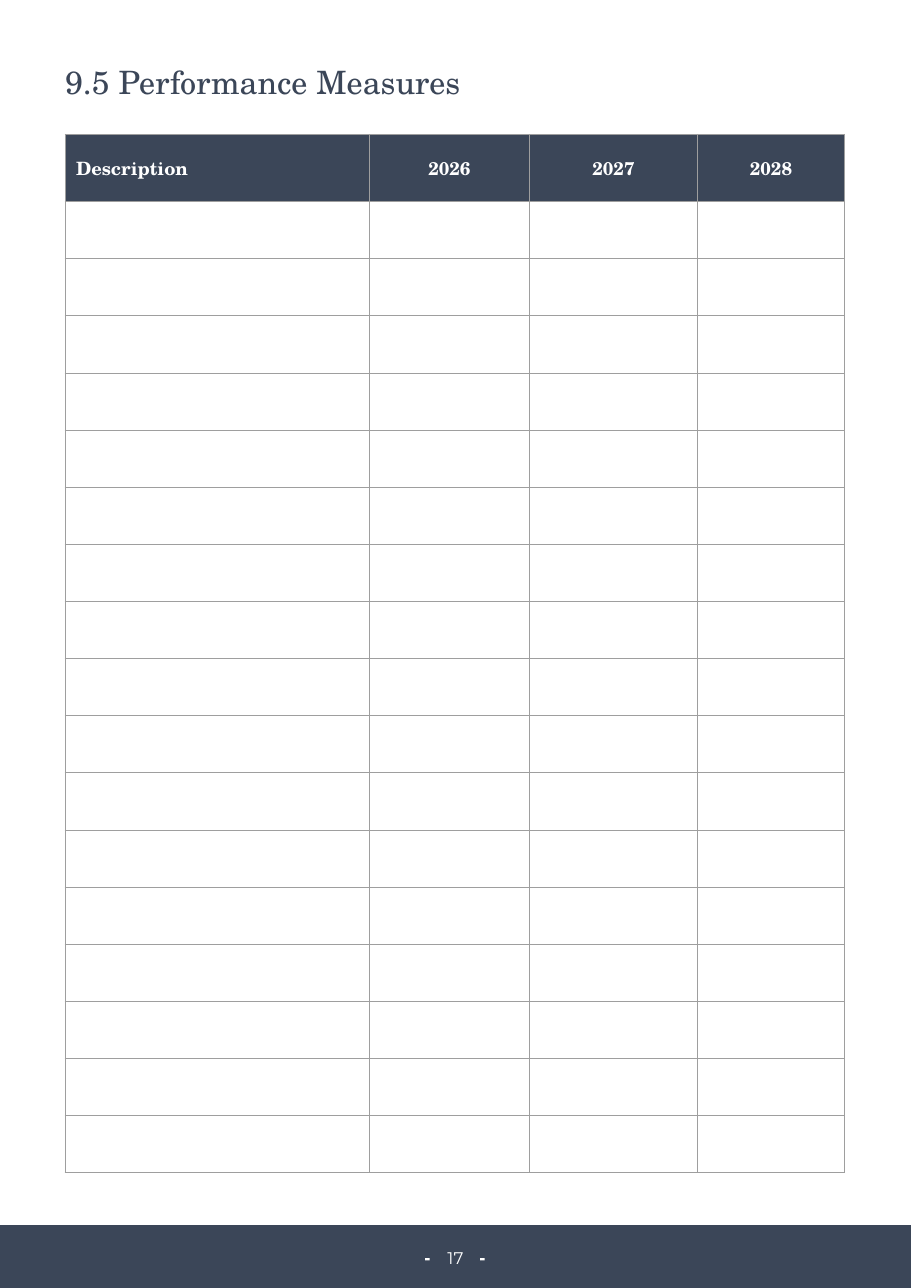
from lxml import etree
from pptx import Presentation
from pptx.dml.color import RGBColor
from pptx.enum.shapes import MSO_SHAPE
from pptx.enum.text import MSO_ANCHOR, MSO_AUTO_SIZE, PP_ALIGN
from pptx.oxml.ns import qn
from pptx.util import Inches, Pt

RECTANGLE = MSO_SHAPE.RECTANGLE
TOP, MIDDLE = MSO_ANCHOR.TOP, MSO_ANCHOR.MIDDLE
LEFT, CENTER = PP_ALIGN.LEFT, PP_ALIGN.CENTER
NO_AUTOFIT = MSO_AUTO_SIZE.NONE
TITLE_ONLY = 5

NAVY, WHITE, GRAY = "3B4658", "FFFFFF", "9E9E9E"
SERIF, SANS = "TeX Gyre Schola", "Montserrat"

PAGE_WIDTH, PAGE_HEIGHT = 8.27, 11.69
MARGIN = 0.59
HEADINGS = ["Description", "2026", "2027", "2028"]
COLUMN_WIDTHS = [2.76, 1.46, 1.52, 1.34]
TABLE_TOP = 1.22
HEADER_HEIGHT = 0.61
BLANK_ROWS, BLANK_HEIGHT = 17, 8.82
CELL_PADDING = 0.1
FOOTER_TOP = 11.12


def color(hex_value):
    return RGBColor.from_string(hex_value)


def write(frame, text, size, font, fill, bold=False, align=LEFT):
    paragraph = frame.paragraphs[0]
    paragraph.alignment = align
    run = paragraph.add_run()
    run.text = text
    run.font.size = Pt(size)
    run.font.name = font
    run.font.bold = bold
    run.font.color.rgb = color(fill)


def prepare_frame(frame):
    """Remove the insets and keep the text at the top of its box."""
    frame.margin_left = frame.margin_right = 0
    frame.margin_top = frame.margin_bottom = 0
    frame.word_wrap = True
    frame.auto_size = NO_AUTOFIT
    frame.vertical_anchor = TOP


def add_bar(slide, left, top, width, height, fill):
    bar = slide.shapes.add_shape(
        RECTANGLE, Inches(left), Inches(top), Inches(width), Inches(height))
    bar.shadow.inherit = False
    bar.fill.solid()
    bar.fill.fore_color.rgb = color(fill)
    bar.line.fill.background()


def set_borders(cell, hex_value, width):
    properties = cell._tc.get_or_add_tcPr()
    for side in ("a:lnL", "a:lnR", "a:lnT", "a:lnB"):
        border = etree.SubElement(properties, qn(side), w=str(Pt(width)))
        solid = etree.SubElement(border, qn("a:solidFill"))
        etree.SubElement(solid, qn("a:srgbClr"), val=hex_value)


def add_title(slide, text):
    title = slide.shapes.title
    title.left, title.top = Inches(MARGIN), Inches(0.57)
    title.width, title.height = Inches(7.09), Inches(0.35)
    prepare_frame(title.text_frame)
    write(title.text_frame, text, 21, SERIF, NAVY)
    title.text_frame.paragraphs[0].line_spacing = 1.0


def add_measures_table(slide):
    table = slide.shapes.add_table(
        BLANK_ROWS + 1, len(HEADINGS), Inches(MARGIN), Inches(TABLE_TOP),
        Inches(sum(COLUMN_WIDTHS)), Inches(HEADER_HEIGHT + BLANK_HEIGHT)).table
    table.first_row = table.horz_banding = False

    for column, width in zip(table.columns, COLUMN_WIDTHS):
        column.width = Inches(width)
    for row in table.rows:
        row.height = Inches(BLANK_HEIGHT / BLANK_ROWS)
    table.rows[0].height = Inches(HEADER_HEIGHT)

    for cell in table.iter_cells():
        set_borders(cell, GRAY, 0.75)
        cell.fill.background()
        cell.vertical_anchor = MIDDLE
        cell.margin_left = cell.margin_right = Inches(CELL_PADDING)
        cell.margin_top = cell.margin_bottom = Inches(CELL_PADDING)

    for index, heading in enumerate(HEADINGS):
        cell = table.cell(0, index)
        cell.fill.solid()
        cell.fill.fore_color.rgb = color(NAVY)
        write(cell.text_frame, heading, 12, SERIF, WHITE, bold=True,
              align=CENTER if index else LEFT)


def add_footer(slide, page_number):
    add_bar(slide, 0, FOOTER_TOP, PAGE_WIDTH, PAGE_HEIGHT - FOOTER_TOP, NAVY)
    number = slide.shapes.add_textbox(
        Inches(3.96), Inches(11.32), Inches(0.35), Inches(0.19))
    prepare_frame(number.text_frame)
    write(number.text_frame, page_number, 11, SANS, WHITE, align=CENTER)
    for dash_left in (3.86, 4.36):
        add_bar(slide, dash_left, 11.42, 0.04, 0.02, WHITE)


def main():
    presentation = Presentation()
    presentation.slide_width = Inches(PAGE_WIDTH)
    presentation.slide_height = Inches(PAGE_HEIGHT)
    slide = presentation.slides.add_slide(presentation.slide_layouts[TITLE_ONLY])
    add_footer(slide, "17")
    add_title(slide, "9.5 Performance Measures")
    add_measures_table(slide)
    presentation.save("out.pptx")


if __name__ == "__main__":
    main()
